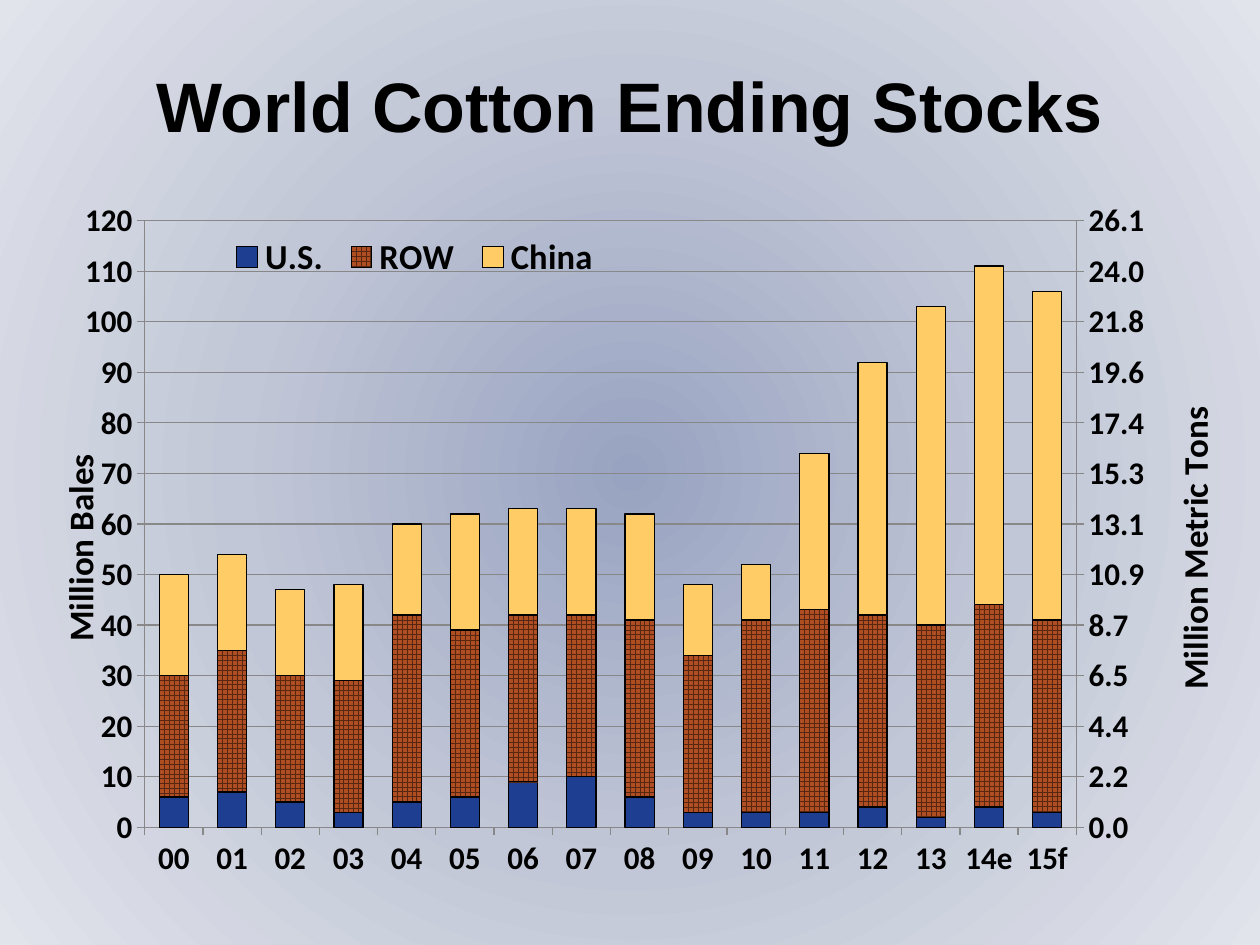
from copy import deepcopy

from lxml import etree
from pptx import Presentation
from pptx import util as u
from pptx.chart import axis as ax
from pptx.chart import data as cd
from pptx.dml.color import RGBColor
from pptx.enum import chart as ce
from pptx.enum import dml, text
from pptx.oxml import parse_xml
from pptx.oxml.ns import qn

THEME = {
    "ink": RGBColor.from_string("000000"),
    "grid": RGBColor.from_string("888888"),
    "us": RGBColor.from_string("1E3E92"),
    "row": RGBColor.from_string("AE4E22"),
    "row_grid": RGBColor.from_string("572711"),
    "china": RGBColor.from_string("FFCC66"),
    "background": [(0, "98A3C1"), (50, "C2C7D7"), (100, "E1E4EB")],
    "title_font": "Arial", "title_size": u.Pt(40),
    "chart_font": "Calibri", "label_size": u.Pt(18), "heading_size": u.Pt(20),
}


def place(part, index, inner=False, **fractions):
    """Give a chart part a manual layout, in fractions of the chart."""
    for old in part.findall(qn("c:layout")):
        part.remove(old)
    layout = etree.Element(qn("c:layout"))
    manual = etree.SubElement(layout, qn("c:manualLayout"))
    settings = [("layoutTarget", "inner")] if inner else []
    settings += [("xMode", "edge"), ("yMode", "edge"), *fractions.items()]
    for tag, value in settings:
        etree.SubElement(manual, qn(f"c:{tag}")).set("val", str(value))
    part.insert(index, layout)


def style_axis(axis, heading, number_format, maximum, major, x, y):
    """Set the scale, labels and rotated heading of a value axis."""
    axis.minimum_scale, axis.maximum_scale, axis.major_unit = 0, maximum, major
    axis.major_tick_mark = ce.XL_TICK_MARK.OUTSIDE
    axis.tick_labels.number_format = number_format
    axis.tick_labels.number_format_is_linked = False
    axis.format.line.color.rgb = THEME["grid"]
    frame = axis.axis_title.text_frame
    frame.clear()
    run = frame.paragraphs[0].add_run()
    run.text = heading
    run.font.size, run.font.bold = THEME["heading_size"], True
    run.font.name, run.font.color.rgb = THEME["chart_font"], THEME["ink"]
    title = axis.axis_title.element
    body = title.find(".//" + qn("a:bodyPr"))
    body.set("rot", "-5400000")
    body.set("vert", "horz")
    place(title, 1, x=x, y=y)


prs = Presentation()
prs.slide_width, prs.slide_height = u.Inches(10), u.Inches(7.5)
slide = prs.slides.add_slide(prs.slide_layouts[5])

# Radial background
stops = "".join(f'<a:gs pos="{pos * 1000}"><a:srgbClr val="{color}"/></a:gs>'
                for pos, color in THEME["background"])
slide.element.find(qn("p:cSld")).insert(0, parse_xml(
    '<p:bg xmlns:p="http://schemas.openxmlformats.org/presentationml/2006/main" '
    'xmlns:a="http://schemas.openxmlformats.org/drawingml/2006/main"><p:bgPr>'
    f'<a:gradFill rotWithShape="0"><a:gsLst>{stops}</a:gsLst><a:path path="circle">'
    '<a:fillToRect l="50000" t="50000" r="50000" b="50000"/></a:path></a:gradFill>'
    '<a:effectLst/></p:bgPr></p:bg>'))

# Title
heading = slide.shapes.title
heading.left, heading.top = u.Inches(0.25), u.Inches(0.33)
heading.width, heading.height = u.Inches(9.49), u.Inches(1)
heading.text_frame.vertical_anchor = text.MSO_ANCHOR.MIDDLE
line = heading.text_frame.paragraphs[0]
line.alignment = text.PP_ALIGN.CENTER
run = line.add_run()
run.text = "World Cotton Ending Stocks"
run.font.name, run.font.size = THEME["title_font"], THEME["title_size"]
run.font.bold, run.font.color.rgb = True, THEME["ink"]

# Stocks in bales, then the same in metric tons for the right axis
stocks = cd.CategoryChartData()
stocks.categories = [f"{year:02}" for year in range(14)] + ["14e", "15f"]
for name, values in {
    "U.S.": [6, 7, 5, 3, 5, 6, 9, 10, 6, 3, 3, 3, 4, 2, 4, 3],
    "ROW": [24, 28, 25, 26, 37, 33, 33, 32, 35, 31, 38, 40, 38, 38, 40, 38],
    "China": [20, 19, 17, 19, 18, 23, 21, 21, 21, 14, 11, 31, 50, 63, 67, 65],
    "Series 4": [1.3, 1.6, 1.2, 0.8, 1.2, 1.3, 2.1, 2.2,
                 1.4, 0.6, 0.6, 0.7, 0.8, 0.5, 0.8, 0.7],
    "Series 5": [5.2, 6.2, 5.5, 5.7, 8.1, 7.3, 7.3, 7,
                 7.6, 6.7, 8.3, 8.7, 8.2, 8.3, 8.8, 8.4],
    "Series 6": [4.3, 4.1, 3.8, 4.1, 4, 4.9, 4.5, 4.5,
                 4.7, 3.1, 2.3, 6.8, 11, 13.7, 14.6, 14.1],
}.items():
    stocks.add_series(name, values)
chart = slide.shapes.add_chart(
    ce.XL_CHART_TYPE.COLUMN_STACKED, u.Inches(0.25), u.Inches(1.17),
    u.Inches(9.49), u.Inches(5.99), stocks).chart
chart.has_title = False
chart.font.name, chart.font.size = THEME["chart_font"], THEME["label_size"]
chart.font.bold, chart.font.color.rgb = True, THEME["ink"]

# Columns
columns = chart.plots[0]
columns.gap_width, columns.overlap, columns.vary_by_categories = 100, 100, False
us, row, china, *metric = columns.series
for series, color in ((us, "us"), (china, "china")):
    series.format.fill.solid()
    series.format.fill.fore_color.rgb = THEME[color]
row_fill = row.format.fill
row_fill.patterned()
row_fill.pattern = dml.MSO_PATTERN.LARGE_GRID
row_fill.fore_color.rgb, row_fill.back_color.rgb = THEME["row_grid"], THEME["row"]
for series in (us, row, china):
    series.format.line.color.rgb, series.format.line.width = THEME["ink"], u.Pt(0.75)
for series in metric:
    series.format.fill.background()
    series.format.line.fill.background()

# Category and left axes
years, bales = chart.category_axis, chart.value_axis
years.tick_label_position = ce.XL_TICK_LABEL_POSITION.LOW
years.major_tick_mark = ce.XL_TICK_MARK.OUTSIDE
years.format.line.color.rgb = THEME["grid"]
bales.has_major_gridlines = True
bales.major_gridlines.format.line.color.rgb = THEME["grid"]
style_axis(bales, "Million Bales", "#,##0", 120, 10, 0.015, 0.395)

# Right axis: second column group with its own pair of axes
plot_area = chart.element.find(".//" + qn("c:plotArea"))
left_group = plot_area.find(qn("c:barChart"))
right_group = deepcopy(left_group)
for group, dropped in ((left_group, slice(3, None)), (right_group, slice(3))):
    for series in group.findall(qn("c:ser"))[dropped]:
        group.remove(series)
left_group.addnext(right_group)
year_axis, bale_axis = plot_area.find(qn("c:catAx")), plot_area.find(qn("c:valAx"))
hidden_axis, ton_axis = deepcopy(year_axis), deepcopy(bale_axis)
bale_axis.addnext(ton_axis)
ton_axis.addnext(hidden_axis)
for ref, axis_id in zip(right_group.findall(qn("c:axId")), ("5001", "5002")):
    ref.set("val", axis_id)
for axis, own, other in ((hidden_axis, "5001", "5002"), (ton_axis, "5002", "5001")):
    axis.find(qn("c:axId")).set("val", own)
    axis.find(qn("c:crossAx")).set("val", other)
hidden_axis.find(qn("c:delete")).set("val", "1")
ton_axis.find(qn("c:axPos")).set("val", "r")
ton_axis.find(qn("c:crosses")).set("val", "max")
tons = ax.ValueAxis(ton_axis)
tons.has_major_gridlines = False
style_axis(tons, "Million Metric Tons", "#,##0.0", 26.143791, 2.178649, 0.96, 0.33)
place(plot_area, 0, inner=True, x=0.096, y=0.097, w=0.79, h=0.804)

# Legend for the bales series only
chart.has_legend = True
chart.legend.position = ce.XL_LEGEND_POSITION.TOP
chart.legend.include_in_layout = False
chart.legend.font.size, chart.legend.font.bold = THEME["heading_size"], True
chart.legend.font.name = THEME["chart_font"]
chart.legend.font.color.rgb = THEME["ink"]
legend = chart.element.find(".//" + qn("c:legend"))
for position, index in enumerate((3, 4, 5), start=1):
    entry = etree.Element(qn("c:legendEntry"))
    etree.SubElement(entry, qn("c:idx")).set("val", str(index))
    etree.SubElement(entry, qn("c:delete")).set("val", "1")
    legend.insert(position, entry)
place(legend, 4, x=0.16, y=0.115, w=0.33, h=0.06)

prs.save("out.pptx")
